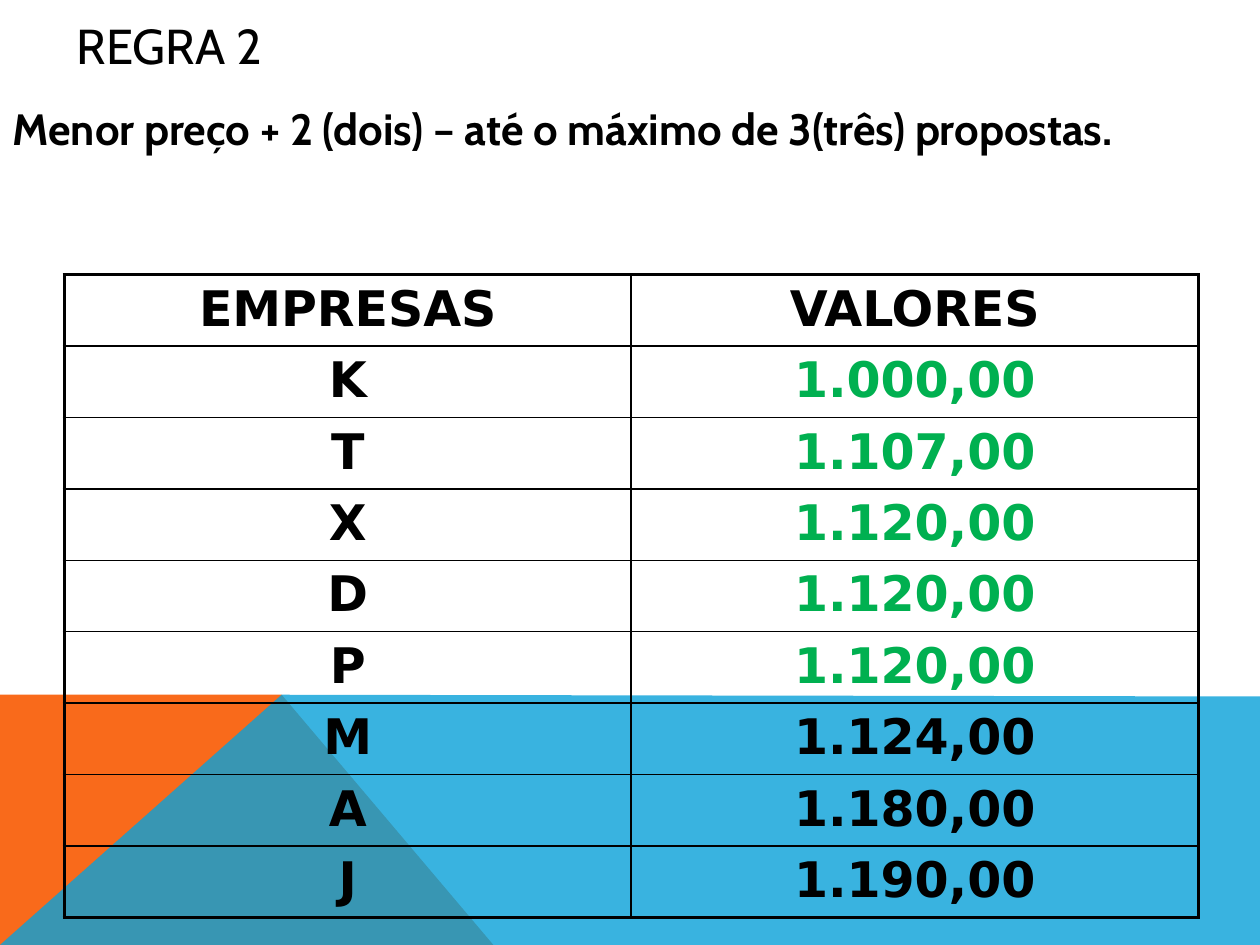
import pptx
import pptx.util
import pptx.dml.color
import pptx.enum.text
import pptx.oxml
import pptx.oxml.ns

Pt = pptx.util.Pt
ALIGN = pptx.enum.text.PP_ALIGN
ANCHOR = pptx.enum.text.MSO_ANCHOR
BLACK, GREEN = "000000", "00B050"

TITLE = "REGRA 2"
RULE = "Menor preço + 2 (dois) – até o máximo de 3(três) propostas."
HEAD = ("EMPRESAS", "VALORES")
BIDS = [
    ("K", "1.000,00"), ("T", "1.107,00"), ("X", "1.120,00"), ("D", "1.120,00"),
    ("P", "1.120,00"), ("M", "1.124,00"), ("A", "1.180,00"), ("J", "1.190,00"),
]
CHOSEN = 5
BANDS = [
    ("F96A1B", 100, [(0, 540), (0, 397.4), (160.6, 397.4), (281.5, 540)]),
    ("08A1D9", 80, [(0, 540), (160.6, 397.4), (720, 398), (720, 540)]),
]


def color(code):
    return pptx.dml.color.RGBColor.from_string(code)


def node(tag, **attrs):
    item = pptx.oxml.parse_xml(f"<a:{tag} {pptx.oxml.ns.nsdecls('a')}/>")
    for key, value in attrs.items():
        item.set(key, str(value))
    return item


def style(para, size, code, font, bold):
    for run in para.runs:
        run.font.size, run.font.name, run.font.bold = Pt(size), font, bold
        run.font.color.rgb = color(code)


def place(shape, left, top, width, height):
    shape.left, shape.top = Pt(left), Pt(top)
    shape.width, shape.height = Pt(width), Pt(height)


def draw_band(slide, layer, code, alpha, points):
    pen = slide.shapes.build_freeform(*points[0], scale=Pt(1))
    pen.add_line_segments(points[1:], close=True)
    band = pen.convert_to_shape()
    band.shadow.inherit = False
    band.fill.solid()
    band.fill.fore_color.rgb = color(code)
    band.line.fill.background()
    if alpha < 100:
        fill = band.element.spPr.find(pptx.oxml.ns.qn("a:solidFill"))
        fill[0].append(node("alpha", val=alpha * 1000))
    band.element.getparent().insert(2 + layer, band.element)


def write(shape, text, size, bold, anchor):
    frame = shape.text_frame
    frame.text = text
    frame.word_wrap = True
    frame.auto_size = pptx.enum.text.MSO_AUTO_SIZE.NONE
    frame.vertical_anchor = anchor
    para = frame.paragraphs[0]
    para.alignment = ALIGN.LEFT
    style(para, size, BLACK, "Cabin", bold)
    return para


def edge(cell, spot, side, width):
    line = node(side, w=Pt(width))
    fill = node("solidFill")
    fill.append(node("srgbClr", val=BLACK))
    line.append(fill)
    cell._tc.get_or_add_tcPr().insert(spot, line)


def fill_cell(cell, text, code, outer):
    cell.text = text
    cell.fill.background()
    para = cell.text_frame.paragraphs[0]
    para.alignment = ALIGN.CENTER
    space = node("spcBef")
    space.append(node("spcPct", val=20000))
    para._p.get_or_add_pPr().append(space)
    style(para, 28, code, "DejaVu Sans", True)
    for spot, side in enumerate(("lnL", "lnR", "lnT", "lnB")):
        edge(cell, spot, side, 2.25 if side in outer else 1)


def add_bids(slide):
    rows = [HEAD] + BIDS
    last = len(rows) - 1
    frame = slide.shapes.add_table(len(rows), 2, Pt(36.7), Pt(157), Pt(648), Pt(40.8 * len(rows)))
    table = frame.table
    table.first_row = table.horz_banding = False
    for r, row in enumerate(rows):
        table.rows[r].height = Pt(40.8)
        for c, text in enumerate(row):
            outer = {("lnL", "lnR")[c]}
            outer |= {"lnT"} if r == 0 else {"lnB"} if r == last else set()
            code = GREEN if c == 1 and 1 <= r <= CHOSEN else BLACK
            fill_cell(table.cell(r, c), text, code, outer)


def main():
    deck = pptx.Presentation()
    deck.slide_width, deck.slide_height = Pt(720), Pt(540)
    slide = deck.slides.add_slide(deck.slide_layouts[1])
    for layer, band in enumerate(BANDS):
        draw_band(slide, layer, *band)
    title, body = slide.shapes.title, slide.placeholders[1]
    place(title, 36.7, -19.4, 648, 90)
    place(body, 0, 54.7, 648, 356.4)
    write(title, TITLE, 28, False, ANCHOR.MIDDLE)
    para = write(body, RULE, 25, True, ANCHOR.TOP)
    para.space_before = Pt(8)
    props = para._p.get_or_add_pPr()
    props.set("marL", str(Pt(27)))
    props.set("indent", str(Pt(-27)))
    props.append(node("buNone"))
    add_bids(slide)
    deck.save("out.pptx")


if __name__ == "__main__":
    main()
